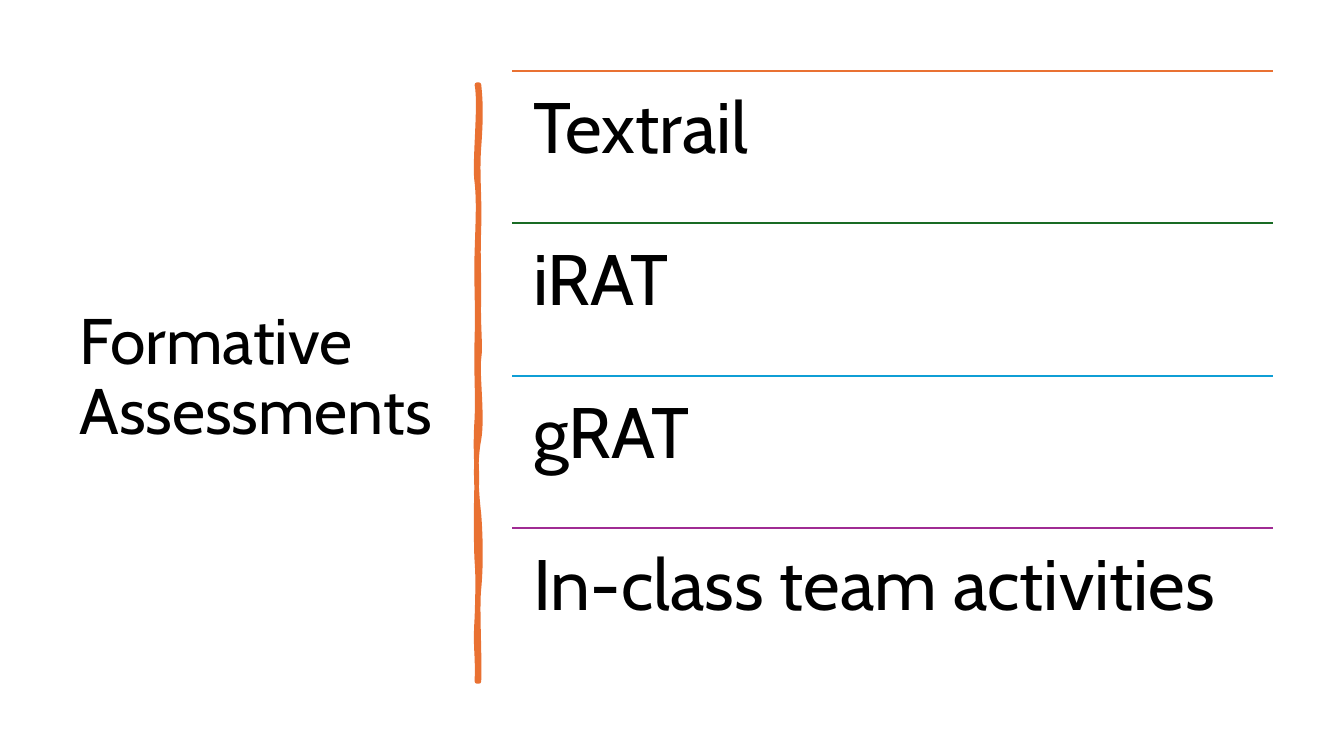
from lxml.etree import SubElement
from pptx import Presentation
from pptx.dml.color import RGBColor
from pptx.enum.shapes import MSO_CONNECTOR
from pptx.enum.text import MSO_ANCHOR
from pptx.oxml.ns import qn
from pptx.util import Inches, Pt

WIDE, HIGH = 13.33, 7.5
BLACK = RGBColor(0x00, 0x00, 0x00)
ORANGE = RGBColor(0xE9, 0x71, 0x32)
GREEN = RGBColor(0x19, 0x6B, 0x24)
BLUE = RGBColor(0x0F, 0x9E, 0xD5)
PURPLE = RGBColor(0xA0, 0x2B, 0x93)

TOP, LEFT = 0.7, 5.08
SPAN, ROW = 7.55, 4.54 / 3
ITEMS = [("Textrail", ORANGE), ("iRAT", GREEN), ("gRAT", BLUE),
         ("In-class team activities", PURPLE)]

# Brush edges run down the right side and back up the left.
# Each curve: first handle x, y; second handle x, y; end y.
RIGHT, BACK = 4.75, 4.73
HEAD, FOOT = 0.84, 6.76
RIM = (
    [(4.77, 1.02, 4.77, 1.19, 1.46), (4.73, 1.73, 4.76, 1.95, 2.26),
     (4.74, 2.57, 4.75, 2.62, 2.94), (4.74, 3.25, 4.77, 3.42, 3.56),
     (4.73, 3.7, 4.79, 4.14, 4.36), (4.71, 4.57, 4.72, 4.84, 5.1),
     (4.77, 5.36, 4.77, 5.64, 5.84), (4.73, 6.03, 4.76, 6.5, FOOT)],
    [(4.74, 6.46, 4.71, 6.44, 6.13), (4.74, 5.83, 4.74, 5.7, 5.57),
     (4.72, 5.44, 4.72, 4.95, 4.77), (4.73, 4.59, 4.71, 4.45, 4.15),
     (4.74, 3.86, 4.72, 3.73, 3.35), (4.74, 2.98, 4.72, 2.81, 2.5),
     (4.74, 2.18, 4.75, 2, 1.81), (4.7, 1.63, 4.77, 1.04, HEAD)],
)
BODY = (
    [(4.75, 1.15, 4.72, 1.25, 1.52), (4.77, 1.79, 4.74, 1.97, 2.08),
     (4.76, 2.2, 4.74, 2.55, 2.94), (4.76, 3.33, 4.73, 3.43, 3.62),
     (4.77, 3.81, 4.77, 3.97, 4.3), (4.72, 4.63, 4.75, 4.74, 5.16),
     (4.75, 5.57, 4.74, 5.53, 5.78), (4.76, 6.03, 4.74, 6.47, FOOT)],
    [(4.7, 6.49, 4.74, 6.32, 6.13), (4.72, 5.95, 4.75, 5.69, 5.39),
     (4.71, 5.1, 4.76, 5, 4.71), (4.7, 4.42, 4.77, 4.2, 3.86),
     (4.69, 3.51, 4.74, 3.25, 3), (4.71, 2.75, 4.71, 2.59, 2.38),
     (4.74, 2.16, 4.74, 1.85, 1.64), (4.71, 1.43, 4.75, 1.21, HEAD)],
)


def add_step(track, kind, *dots):
    """Add one drawing step, with its points in slide inches."""
    step = SubElement(track, qn("a:" + kind))
    for x, y in dots:
        SubElement(step, qn("a:pt"), x=str(Inches(x - BACK)),
                   y=str(Inches(y - HEAD)))


def add_track(tracks, edges, **look):
    track = SubElement(tracks, qn("a:path"), w=str(Inches(RIGHT - BACK)),
                       h=str(Inches(FOOT - HEAD)), **look)
    add_step(track, "moveTo", (RIGHT, HEAD))
    for x, edge in zip((RIGHT, BACK), edges):
        if x == BACK:
            add_step(track, "lnTo", (BACK, FOOT))
        for ax, ay, bx, by, end in edge:
            add_step(track, "cubicBezTo", (ax, ay), (bx, by), (x, end))
    add_step(track, "close")


def add_brush(slide):
    """Draw the stroke: an outlined rim and a filled body in one shape."""
    pen = slide.shapes.build_freeform(Inches(RIGHT), Inches(HEAD), scale=1.0)
    pen.add_line_segments([(Inches(RIGHT), Inches(FOOT)),
                           (Inches(BACK), Inches(FOOT))])
    shape = pen.convert_to_shape()
    shape.shadow.inherit = False
    shape.fill.solid()
    shape.fill.fore_color.rgb = ORANGE
    shape.line.color.rgb = ORANGE
    shape.line.width = Pt(3.25)
    tracks = shape._element.spPr.find(".//" + qn("a:pathLst"))
    tracks.clear()
    add_track(tracks, RIM, fill="none")
    add_track(tracks, BODY, stroke="0")


def add_rule(slide, y, color):
    rule = slide.shapes.add_connector(
        MSO_CONNECTOR.STRAIGHT, Inches(LEFT), Inches(y),
        Inches(LEFT + SPAN), Inches(y))
    rule.line.color.rgb = color
    rule.line.width = Pt(1.5)
    SubElement(rule._element.spPr, qn("a:effectLst"))


def add_text(slide, text, box, size, pad=(0.1, 0.05), anchor=MSO_ANCHOR.TOP):
    frame = slide.shapes.add_textbox(*map(Inches, box)).text_frame
    frame.word_wrap = True
    frame.vertical_anchor = anchor
    frame.margin_left = frame.margin_right = Inches(pad[0])
    frame.margin_top = frame.margin_bottom = Inches(pad[1])
    para = frame.paragraphs[0]
    para.line_spacing = 0.9
    run = para.add_run()
    run.text = text
    run.font.name = "Cabin"
    run.font.size = Pt(size)
    run.font.color.rgb = BLACK


def main():
    deck = Presentation()
    deck.slide_width, deck.slide_height = Inches(WIDE), Inches(HIGH)
    slide = deck.slides.add_slide(deck.slide_layouts[6])
    add_text(slide, "Formative Assessments", (0.69, TOP, 3.74, 6.11), 46,
             anchor=MSO_ANCHOR.MIDDLE)
    add_brush(slide)
    for row, (text, color) in enumerate(ITEMS):
        y = TOP + row * ROW
        add_rule(slide, y, color)
        add_text(slide, text, (LEFT, y, SPAN, ROW), 51, pad=(0.21, 0.21))
    deck.save("out.pptx")


if __name__ == "__main__":
    main()
